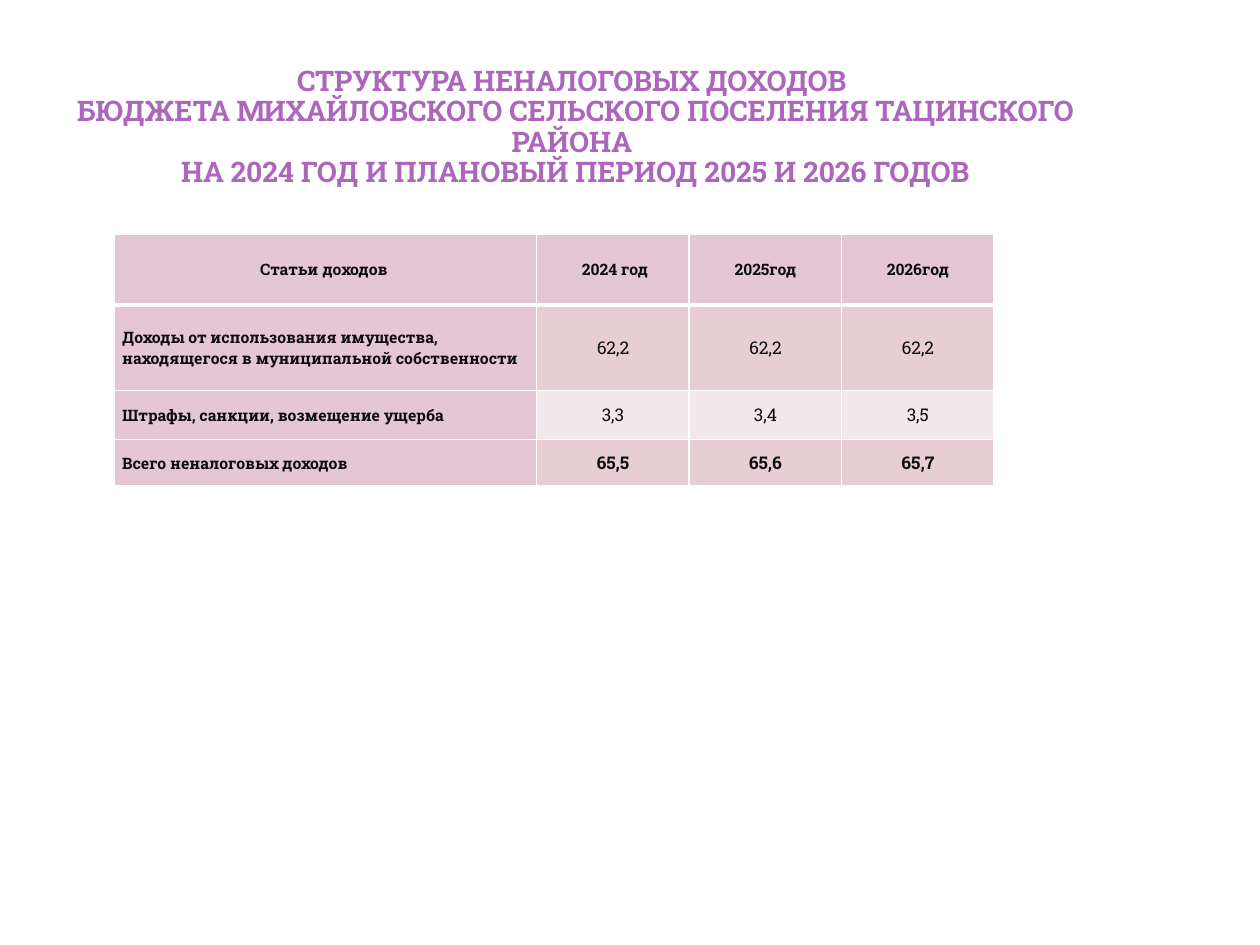
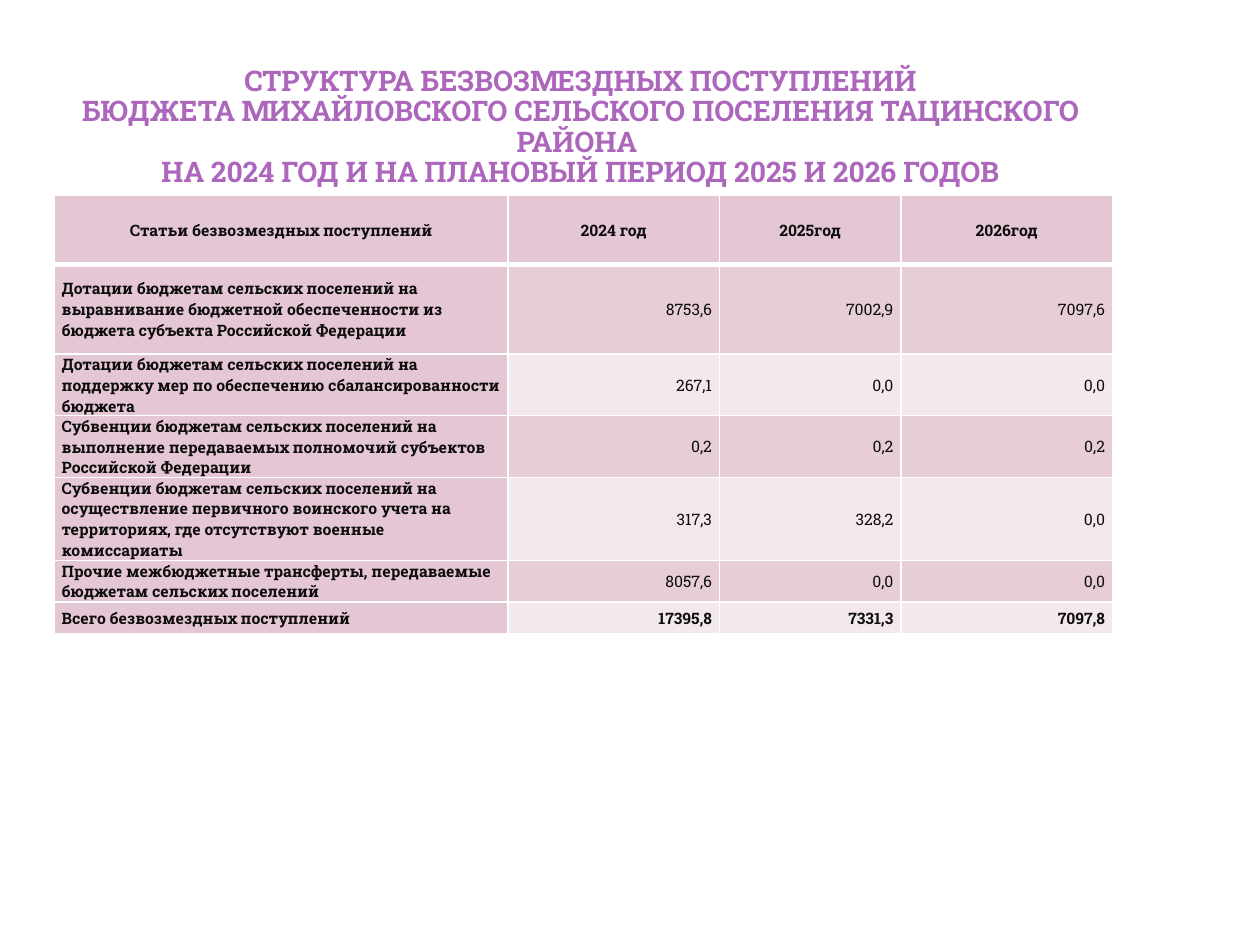
from lxml import etree
from pptx import Presentation
from pptx import util as u
from pptx.dml.color import RGBColor
from pptx.enum import text
from pptx.oxml import ns

EMU_PER_PX = 9144  # 100 px to the inch
FONT = "Roboto Slab"
COLORS = {
    "title": "AC66BB",
    "ink": "0D0D0D",
    "heading": "E5C6D5",
    "band_dark": "E6CED4",
    "band_light": "F3E8EB",
    "rule": "FFFFFF",
}
LEFT, CENTER, RIGHT = text.PP_ALIGN.LEFT, text.PP_ALIGN.CENTER, text.PP_ALIGN.RIGHT


def px(length):
    return u.Emu(length * EMU_PER_PX)


class Deck:
    """Holds the shared style and the slide being filled."""

    def __init__(self, width, height):
        self.prs = Presentation()
        self.prs.slide_width, self.prs.slide_height = px(width), px(height)
        self.slide = None

    def new_slide(self):
        self.slide = self.prs.slides.add_slide(self.prs.slide_layouts[6])

    def set_text(self, paragraph, wording, size, color, bold, align):
        paragraph.text = wording
        paragraph.alignment = align
        font = paragraph.font
        font.name, font.size, font.bold = FONT, u.Pt(size), bold
        font.color.rgb = RGBColor.from_string(COLORS[color])

    def title(self, wording, left, width):
        box = self.slide.shapes.add_textbox(px(left), px(36), px(width), px(114))
        frame = box.text_frame
        frame.word_wrap = True
        frame.vertical_anchor = text.MSO_ANCHOR.BOTTOM
        frame.margin_left = frame.margin_right = px(5)
        frame.margin_top = frame.margin_bottom = 0
        paragraph = frame.paragraphs[0]
        self.set_text(paragraph, wording, 16.2, "title", True, CENTER)
        paragraph.line_spacing = 0.9

    def borders(self, cell, top, bottom):
        """Draw the cell's rules; top and bottom are widths in points."""
        properties = cell._tc.get_or_add_tcPr()
        widths = {"lnL": 1, "lnR": 1, "lnT": top, "lnB": bottom}
        for position, (side, width) in enumerate(widths.items()):
            line = etree.Element(ns.qn(f"a:{side}"), w=str(u.Pt(width)))
            fill = etree.SubElement(line, ns.qn("a:solidFill"))
            etree.SubElement(fill, ns.qn("a:srgbClr"), val=COLORS["rule"])
            properties.insert(position, line)

    def cell(self, cell, wording, fill, size, bold, align):
        cell.fill.solid()
        cell.fill.fore_color.rgb = RGBColor.from_string(COLORS[fill])
        cell.vertical_anchor = text.MSO_ANCHOR.MIDDLE
        cell.margin_left = cell.margin_right = px(6)
        cell.margin_top = cell.margin_bottom = 0
        self.set_text(cell.text_frame.paragraphs[0], wording, size, "ink", bold, align)

    def budget_table(self, rows, left, top, widths, heights, value_size, value_align):
        """Heading row first, total row last, item names in the first column."""
        table = self.slide.shapes.add_table(
            len(rows), len(widths), px(left), px(top),
            px(sum(widths)), px(sum(heights))).table
        for column, width in zip(table.columns, widths):
            column.width = px(width)
        for r, (row, height) in enumerate(zip(rows, heights)):
            table.rows[r].height = px(height)
            band = "band_dark" if r % 2 else "band_light"
            is_total = r == len(rows) - 1
            for c, wording in enumerate(row):
                cell = table.cell(r, c)
                if r == 0:
                    self.cell(cell, wording, "heading", 9, True, CENTER)
                elif c == 0:
                    self.cell(cell, wording, "heading", 9, True, LEFT)
                else:
                    self.cell(cell, wording, band, value_size, is_total, value_align)
                self.borders(cell, top=3 if r == 1 else 1, bottom=3 if r == 0 else 1)


NON_TAX_INCOME = [
    ("Статьи доходов ", " 2024 год", "2025год", "2026год"),
    ("Доходы от использования имущества, находящегося в муниципальной собственности",
     "62,2", "62,2", "62,2"),
    ("Штрафы, санкции, возмещение ущерба", "3,3", "3,4", "3,5"),
    ("Всего неналоговых доходов", "65,5", "65,6", "65,7"),
]
GRANTS = [
    ("Статьи безвозмездных поступлений", "2024 год", "2025год", "2026год"),
    ("Дотации бюджетам сельских поселений на выравнивание бюджетной обеспеченности "
     "из бюджета субъекта Российской Федерации", "8753,6", "7002,9", "7097,6"),
    ("Дотации бюджетам сельских поселений на поддержку мер по обеспечению "
     "сбалансированности бюджета", "267,1", "0,0", "0,0"),
    ("Субвенции бюджетам сельских поселений на выполнение передаваемых полномочий "
     "субъектов Российской Федерации", "0,2", "0,2", "0,2"),
    ("Субвенции бюджетам сельских поселений на осуществление первичного воинского "
     "учета на территориях, где отсутствуют военные комиссариаты",
     "317,3", "328,2", "0,0"),
    ("Прочие межбюджетные трансферты, передаваемые бюджетам сельских поселений",
     "8057,6", "0,0", "0,0"),
    ("Всего безвозмездных поступлений", "17395,8", "7331,3", "7097,8"),
]
SETTLEMENT = "БЮДЖЕТА МИХАЙЛОВСКОГО СЕЛЬСКОГО ПОСЕЛЕНИЯ ТАЦИНСКОГО РАЙОНА "


def main():
    deck = Deck(1000, 750)

    deck.new_slide()
    deck.title(f"СТРУКТУРА НЕНАЛОГОВЫХ ДОХОДОВ \n{SETTLEMENT}\n"
               "НА 2024 ГОД И ПЛАНОВЫЙ ПЕРИОД 2025 И 2026 ГОДОВ", left=23, width=867)
    deck.budget_table(NON_TAX_INCOME, left=91, top=186,
                      widths=[335] + [121] * 3, heights=[56, 68, 39, 37],
                      value_size=10, value_align=CENTER)

    deck.new_slide()
    deck.title(f"СТРУКТУРА БЕЗВОЗМЕЗДНЫХ ПОСТУПЛЕНИЙ\n{SETTLEMENT}\n"
               "НА 2024 ГОД И НА ПЛАНОВЫЙ ПЕРИОД 2025 И 2026 ГОДОВ", left=31, width=859)
    deck.budget_table(GRANTS, left=43, top=155,
                      widths=[360, 168, 144, 168],
                      heights=[55, 71, 49, 49, 66, 33, 25],
                      value_size=9, value_align=RIGHT)

    deck.prs.save("out.pptx")


if __name__ == "__main__":
    main()
